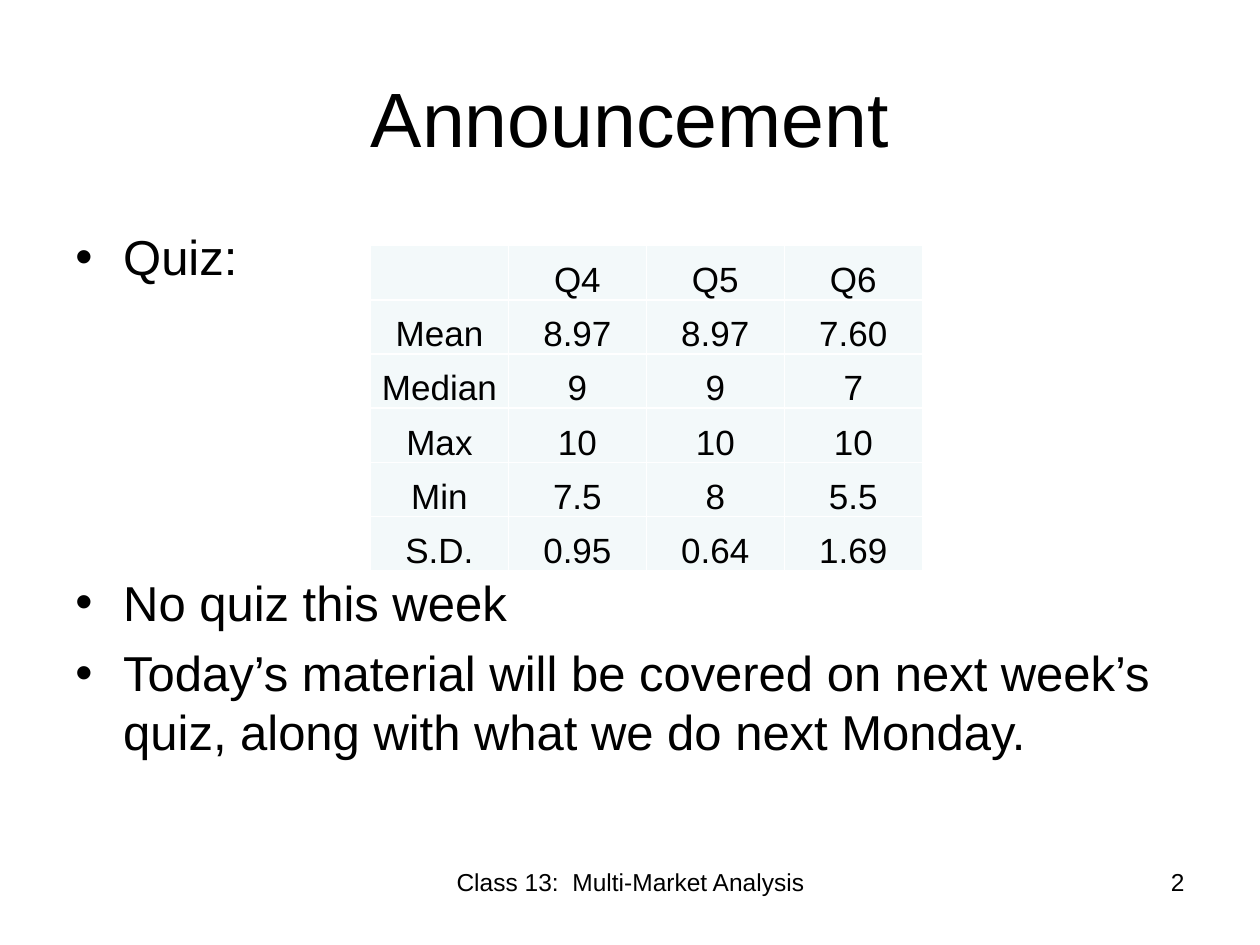
from dataclasses import dataclass

from lxml import etree
from pptx import Presentation
from pptx import util as u
from pptx.dml.color import RGBColor
from pptx.enum import text
from pptx.oxml import ns


@dataclass(frozen=True)
class Theme:
    font: str = "Arial"
    ink: str = "000000"
    cell: str = "F3F9FA"
    rule: str = "FFFFFF"
    title: int = 44
    body: int = 28
    grid: int = 20
    foot: int = 14


class Deck:
    def __init__(self, theme):
        self.theme = theme
        self.prs = Presentation()
        self.prs.slide_width = u.Inches(10)
        self.prs.slide_height = u.Inches(7.5)
        self.slide = self.prs.slides.add_slide(self.prs.slide_layouts[6])

    def style(self, para, size, align):
        para.alignment = align
        para.font.size = u.Pt(size)
        for run in para.runs:
            run.font.name = self.theme.font
            run.font.size = u.Pt(size)
            run.font.color.rgb = RGBColor.from_string(self.theme.ink)

    def label(self, words, box, size, align, anchor=text.MSO_ANCHOR.TOP):
        frame = self.slide.shapes.add_textbox(*map(u.Inches, box)).text_frame
        frame.word_wrap = True
        frame.vertical_anchor = anchor
        frame.text = words
        for para in frame.paragraphs:
            self.style(para, size, align)
        return frame

    def bullets(self, items, box):
        words = "\n".join(item for item, gap in items)
        frame = self.label(words, box, self.theme.body, text.PP_ALIGN.LEFT)
        for para, (item, gap) in zip(frame.paragraphs, items):
            para.space_before = u.Pt(gap)
            props = para._p.get_or_add_pPr()
            props.set("marL", str(u.Inches(0.38)))
            props.set("indent", str(u.Inches(-0.38)))
            face = etree.SubElement(props, ns.qn("a:buFont"))
            face.set("typeface", self.theme.font)
            etree.SubElement(props, ns.qn("a:buChar")).set("char", "•")

    def border(self, cell):
        props = cell._tc.get_or_add_tcPr()
        for spot, side in enumerate(("lnL", "lnR", "lnT", "lnB")):
            line = etree.Element(ns.qn(f"a:{side}"), w=str(u.Pt(1)))
            fill = etree.SubElement(line, ns.qn("a:solidFill"))
            etree.SubElement(fill, ns.qn("a:srgbClr")).set("val", self.theme.rule)
            props.insert(spot, line)

    def table(self, rows, box):
        shape = self.slide.shapes.add_table(
            len(rows), len(rows[0]), *map(u.Inches, box))
        for r, row in enumerate(rows):
            for c, value in enumerate(row):
                cell = shape.table.cell(r, c)
                cell.text = value
                cell.margin_left = cell.margin_right = u.Inches(0.01)
                cell.margin_top = u.Inches(0.01)
                cell.margin_bottom = 0
                cell.vertical_anchor = text.MSO_ANCHOR.BOTTOM
                cell.fill.solid()
                cell.fill.fore_color.rgb = RGBColor.from_string(self.theme.cell)
                self.style(cell.text_frame.paragraphs[0], self.theme.grid,
                           text.PP_ALIGN.CENTER)
                self.border(cell)


def main():
    theme = Theme()
    deck = Deck(theme)
    deck.label("Announcement", (0.5, 0.3, 9, 1.25), theme.title,
               text.PP_ALIGN.CENTER, text.MSO_ANCHOR.MIDDLE)
    deck.bullets([
        ("Quiz:", 6.5),
        ("No quiz this week", 164),
        ("Today’s material will be covered on next week’s quiz, "
         "along with what we do next Monday.", 6.5),
    ], (0.5, 1.75, 9, 4.95))
    deck.label("Class 13:  Multi-Market Analysis", (3.42, 6.83, 3.17, 0.52),
               theme.foot, text.PP_ALIGN.CENTER)
    deck.label("2", (7.17, 6.83, 2.33, 0.52), theme.foot, text.PP_ALIGN.RIGHT)
    deck.table([
        ("", "Q4", "Q5", "Q6"),
        ("Mean", "8.97", "8.97", "7.60"),
        ("Median", "9", "9", "7"),
        ("Max", "10", "10", "10"),
        ("Min", "7.5", "8", "5.5"),
        ("S.D.", "0.95", "0.64", "1.69"),
    ], (2.94, 1.95, 4.38, 2.58))
    deck.prs.save("out.pptx")


if __name__ == "__main__":
    main()
